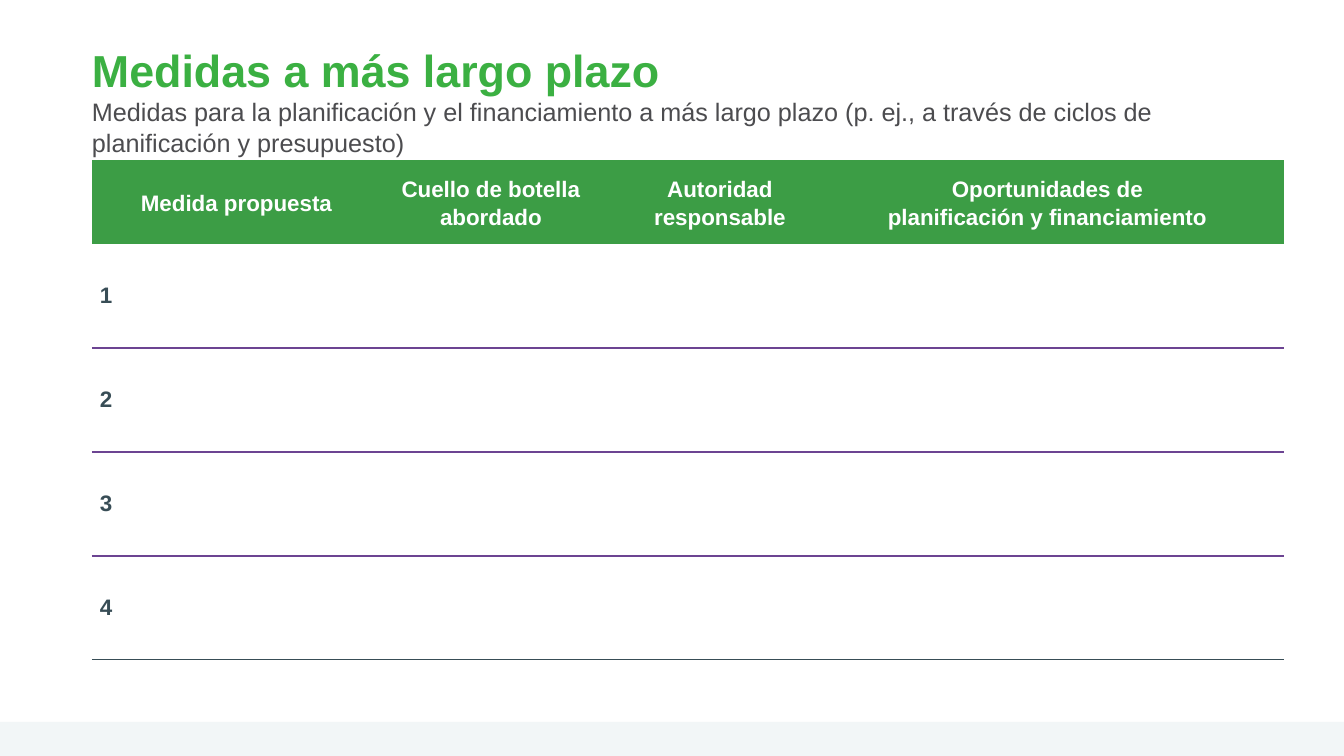
from lxml.etree import SubElement
from pptx import Presentation
from pptx.dml.color import RGBColor
from pptx.enum.shapes import MSO_SHAPE
from pptx.enum.text import MSO_ANCHOR, MSO_AUTO_SIZE, PP_ALIGN
from pptx.oxml import parse_xml
from pptx.oxml.ns import nsdecls, qn
from pptx.util import Pt

TITLE = "Medidas a más largo plazo"
SUBTITLE = ("Medidas para la planificación y el financiamiento a más largo plazo "
            "(p. ej., a través de ciclos de planificación y presupuesto)")
HEADERS = ["", "Medida propuesta", "Cuello de botella abordado", "Autoridad\nresponsable",
           "Oportunidades de\nplanificación y financiamiento"]
MEASURES = ["1", "2", "3", "4"]

COLORS = {"title": "3BB042", "subtitle": "4C4C4F", "header": "3C9D45", "white": "FFFFFF",
          "number": "384D56", "rule": "6C4492", "band": "F2F6F7"}
FORMATS = {
    "title": {"size": Pt(32), "bold": True, "name": "Arial"},
    "subtitle": {"size": Pt(18), "bold": False, "name": "Arial"},
    "white": {"size": Pt(16), "bold": True, "name": "Arial"},
    "number": {"size": Pt(16), "bold": True, "name": "Arial"},
}
NO_STYLE = "{2D5ABB26-0587-4C30-8999-92F81FD0307C}"

SLIDE_WIDTH, SLIDE_HEIGHT = 1344, 756
LEFT, TITLE_TOP, TABLE_TOP = 92, 40, 160
COLUMN_WIDTHS = [28, 233, 276, 182, 473]
HEADER_HEIGHT, ROW_HEIGHT = 84, 104
BAND_HEIGHT = 34
HEADER_MARGINS = [7, 0, 7, 0]
BODY_MARGINS = [5, 5, 5, 5]
SIDES = ["left", "top", "right", "bottom"]


def px(length):
    return round(length * 914400 / 100.8)


def color(name):
    return RGBColor.from_string(COLORS[name])


def format_font(font, style):
    for attribute, value in FORMATS[style].items():
        setattr(font, attribute, value)
    font.color.rgb = color(style)


def set_margins(target, margins):
    for side, margin in zip(SIDES, margins):
        setattr(target, f"margin_{side}", px(margin))


def add_bottom_border(cell, name):
    border = parse_xml(
        f'<a:lnB {nsdecls("a")} w="{Pt(1)}"><a:solidFill>'
        f'<a:srgbClr val="{COLORS[name]}"/></a:solidFill></a:lnB>')
    cell._tc.get_or_add_tcPr().insert(0, border)


def fill_cell(cell, text, style, margins, line_spacing):
    cell.text = text
    cell.vertical_anchor = MSO_ANCHOR.MIDDLE
    set_margins(cell, margins)
    for paragraph in cell.text_frame.paragraphs:
        paragraph.alignment = PP_ALIGN.CENTER
        paragraph.line_spacing = line_spacing
        format_font(paragraph.font, style)


def add_band(slide):
    band = slide.shapes.add_shape(MSO_SHAPE.RECTANGLE, 0, px(SLIDE_HEIGHT - BAND_HEIGHT),
                                  px(SLIDE_WIDTH), px(BAND_HEIGHT))
    band.shadow.inherit = False
    band.fill.solid()
    band.fill.fore_color.rgb = color("band")
    band.line.fill.background()


def add_title(slide):
    title = slide.shapes.title
    title.left, title.top = px(LEFT), px(TITLE_TOP)
    title.width, title.height = px(sum(COLUMN_WIDTHS)), px(TABLE_TOP - TITLE_TOP)
    frame = title.text_frame
    frame.auto_size = MSO_AUTO_SIZE.NONE
    frame.word_wrap = True
    frame.vertical_anchor = MSO_ANCHOR.MIDDLE
    set_margins(frame, [0, 0, 0, 0])
    paragraph = frame.paragraphs[0]
    paragraph.alignment = PP_ALIGN.LEFT
    for text, style in [(TITLE, "title"), (SUBTITLE, "subtitle")]:
        if style == "subtitle":
            paragraph.add_line_break()
        run = paragraph.add_run()
        run.text = text
        format_font(run.font, style)


def add_measures_table(slide):
    heights = [HEADER_HEIGHT] + [ROW_HEIGHT] * len(MEASURES)
    table = slide.shapes.add_table(len(heights), len(COLUMN_WIDTHS), px(LEFT), px(TABLE_TOP),
                                   px(sum(COLUMN_WIDTHS)), px(sum(heights))).table
    properties = table._tbl.tblPr
    style_id = properties.find(qn("a:tableStyleId"))
    if style_id is None:
        style_id = SubElement(properties, qn("a:tableStyleId"))
    style_id.text = NO_STYLE
    table.horz_banding = False
    for column, width in zip(table.columns, COLUMN_WIDTHS):
        column.width = px(width)
    for row, height in zip(table.rows, heights):
        row.height = px(height)

    for column, header in enumerate(HEADERS):
        cell = table.cell(0, column)
        fill_cell(cell, header, "white", HEADER_MARGINS, 1.15)
        cell.fill.solid()
        cell.fill.fore_color.rgb = color("header")

    for row, number in enumerate(MEASURES, 1):
        border = "number" if row == len(MEASURES) else "rule"
        for column in range(len(HEADERS)):
            cell = table.cell(row, column)
            fill_cell(cell, number if column == 0 else "", "number", BODY_MARGINS, 1.0)
            cell.fill.background()
            add_bottom_border(cell, border)


def main():
    presentation = Presentation()
    presentation.slide_width, presentation.slide_height = px(SLIDE_WIDTH), px(SLIDE_HEIGHT)
    slide = presentation.slides.add_slide(presentation.slide_layouts[5])
    add_band(slide)
    add_title(slide)
    add_measures_table(slide)
    presentation.save("out.pptx")


if __name__ == "__main__":
    main()
